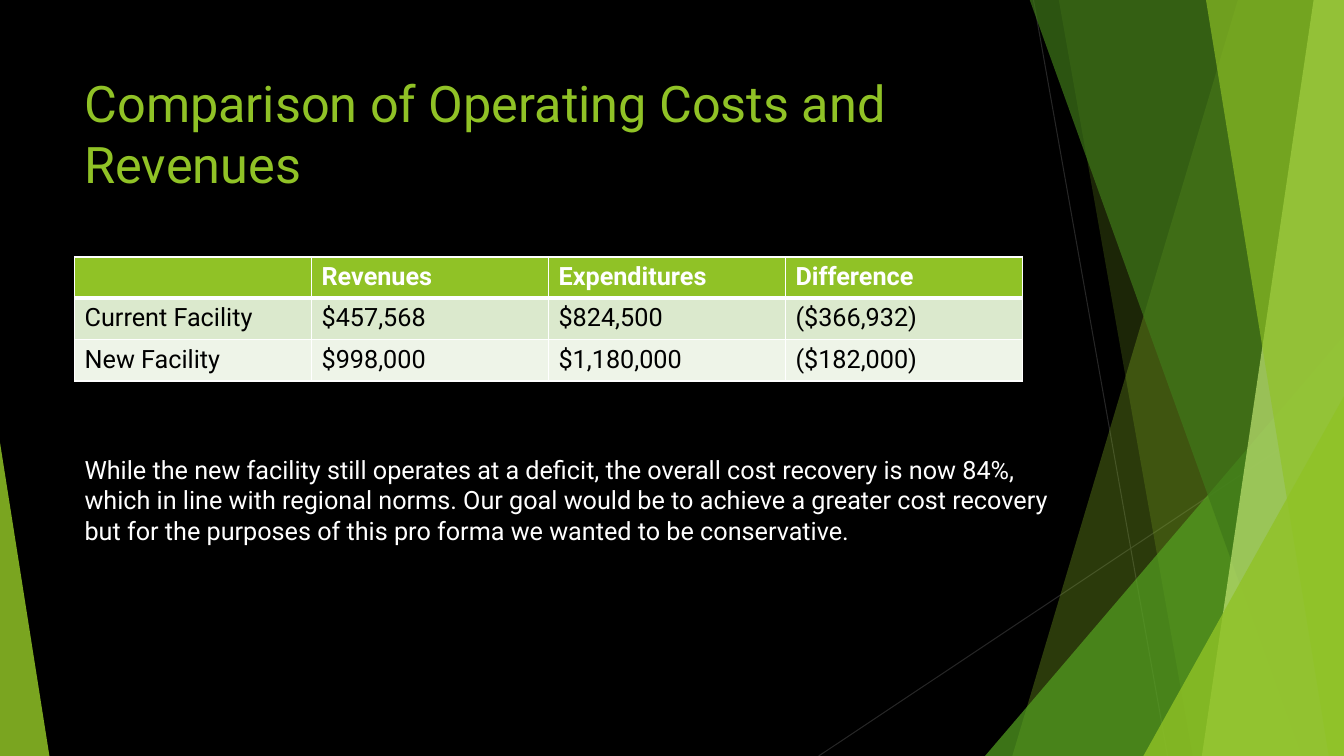
from lxml import etree
from pptx import Presentation
from pptx.dml.color import RGBColor
from pptx.enum import shapes, text
from pptx.oxml import ns
from pptx.util import Emu, Pt

PX = 9144
W, H = 1333, 750
FONT = "Roboto"
COLORS = {
    "black": "000000", "white": "FFFFFF", "gray": "262626",
    "lime": "90C226", "green": "54A021", "forest": "3F7819", "pale": "C0E474",
    "band_dark": "DBE9CD", "band_light": "EEF4E8",
}
ROWS = [
    ["", "Revenues", "Expenditures", "Difference"],
    ["Current Facility", "$457,568", "$824,500", "($366,932)"],
    ["New Facility", "$998,000", "$1,180,000", "($182,000)"],
]
NOTE = [
    "While the new facility still operates at a deficit, the overall cost recovery is now 84%,",
    "which in line with regional norms. Our goal would be to achieve a greater cost recovery",
    "but for the purposes of this pro forma we wanted to be conservative.",
]


def px(*lengths):
    return [Emu(n * PX) for n in lengths]


def rgb(name):
    return RGBColor.from_string(COLORS[name])


def set_font(p, size, color, bold=False):
    p.font.name = FONT
    p.font.size = Pt(size)
    p.font.bold = bold
    p.font.color.rgb = rgb(color)


def paint(sp, color, opacity):
    sp.shadow.inherit = False
    sp.line.fill.background()
    sp.fill.solid()
    sp.fill.fore_color.rgb = rgb(color)
    clr = sp.fill._xPr.find(".//" + ns.qn("a:srgbClr"))
    etree.SubElement(clr, ns.qn("a:alpha"), val=str(opacity * 1000))


def add_line(s, x1, y1, x2, y2):
    line = s.shapes.add_connector(shapes.MSO_CONNECTOR.STRAIGHT, *px(x1, y1, x2, y2))
    line.line.color.rgb = rgb("gray")
    line.line.width = Pt(0.75)
    etree.SubElement(line._element.spPr, ns.qn("a:effectLst"))


def add_shard(s, top_x, bottom_x, color, opacity):
    fb = s.shapes.build_freeform(top_x, -1, scale=PX)
    fb.add_line_segments([(W, -1), (W, H), (bottom_x, H)], close=True)
    paint(fb.convert_to_shape(), color, opacity)


def add_triangle(s, x, y, w, apex, color, opacity):
    sp = s.shapes.add_shape(shapes.MSO_SHAPE.ISOSCELES_TRIANGLE, *px(x, y, w, H - y))
    sp.adjustments[0] = apex
    paint(sp, color, opacity)


def add_text(s, x, y, w, h, lines, size, color, wrap):
    tf = s.shapes.add_textbox(*px(x, y, w, h)).text_frame
    tf.word_wrap = wrap
    tf.vertical_anchor = text.MSO_ANCHOR.TOP
    p = tf.paragraphs[0]
    for i, words in enumerate(lines):
        if i:
            p.add_line_break()
        p.add_run().text = words
    set_font(p, size, color)


def set_border(cell, side, width):
    ln = etree.Element(ns.qn(f"a:{side}"), w=str(Pt(width)))
    fill = etree.SubElement(ln, ns.qn("a:solidFill"))
    etree.SubElement(fill, ns.qn("a:srgbClr"), val=COLORS["white"])
    return ln


def add_cost_table(s, x, y, col_w, row_h):
    n_rows, n_cols = len(ROWS), len(ROWS[0])
    frame = s.shapes.add_table(n_rows, n_cols, *px(x, y, col_w * n_cols, row_h * n_rows))
    table = frame.table
    for col in table.columns:
        col.width = Emu(col_w * PX)
    for i, values in enumerate(ROWS):
        table.rows[i].height = Emu(row_h * PX)
        for j, value in enumerate(values):
            cell = table.cell(i, j)
            cell.fill.solid()
            cell.fill.fore_color.rgb = rgb(["lime", "band_dark", "band_light"][i])
            p = cell.text_frame.paragraphs[0]
            p.text = value
            set_font(p, 18, "black" if i else "white", bold=i == 0)
            widths = {"lnL": 1, "lnR": 1, "lnT": 3 if i == 1 else 1, "lnB": 1 if i else 3}
            tc_pr = cell._tc.get_or_add_tcPr()
            for k, (side, width) in enumerate(widths.items()):
                tc_pr.insert(k, set_border(cell, side, width))


def main():
    prs = Presentation()
    prs.slide_width, prs.slide_height = px(W, H)
    s = prs.slides.add_slide(prs.slide_layouts[6])
    s.background.fill.solid()
    s.background.fill.fore_color.rgb = rgb("black")

    add_line(s, 1025, 0, 1158, H)
    add_line(s, W, 403, 812, H)
    add_shard(s, 1228, 1004, "lime", 30)
    add_shard(s, 1050, 1183, "lime", 20)
    add_triangle(s, 977, 333, 356, 1, "green", 72)
    add_shard(s, 1021, 1291, "forest", 70)
    add_shard(s, 1303, 1192, "pale", 70)
    add_shard(s, 1196, 1318, "lime", 65)
    add_triangle(s, 1134, 393, 199, 1, "lime", 80)
    add_triangle(s, 0, 439, 49, 0, "lime", 85)

    title = ["Comparison of Operating Costs and Revenues"]
    add_text(s, 74, 67, 940, 144, title, 36, "lime", True)
    add_cost_table(s, 74, 255, 235, 41)
    add_text(s, 74, 446, 1016, 101, NOTE, 18, "white", False)
    prs.save("out.pptx")


if __name__ == "__main__":
    main()
